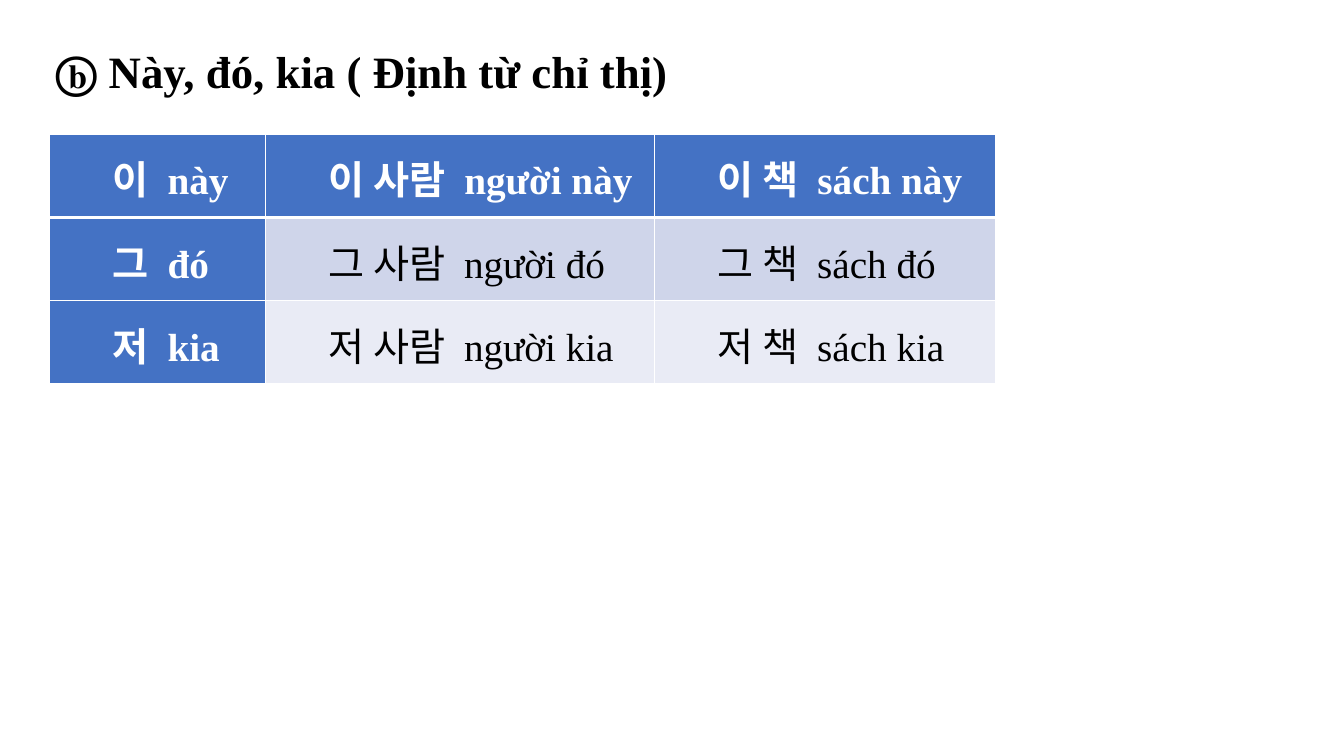
from dataclasses import dataclass

from lxml import etree
from pptx import Presentation
from pptx import util as u
from pptx.dml.color import RGBColor
from pptx.enum import text
from pptx.oxml import ns


@dataclass(frozen=True)
class Theme:
    """Colours, font and sizes of the slide."""
    font: str = "Times New Roman"
    black: str = "000000"
    white: str = "FFFFFF"
    header: str = "4472C4"
    bands: tuple = ("CFD5EA", "E9EBF5")
    title_size: int = 32
    cell_size: int = 28
    line_spacing: float = 1.07
    word_gap: int = 7


THEME = Theme()
TITLE = "ⓑ Này, đó, kia ( Định từ chỉ thị)"
DEMONSTRATIVES = [
    [("이", "này"), ("이 사람", "người này"), ("이 책", "sách này")],
    [("그", "đó"), ("그 사람", "người đó"), ("그 책", "sách đó")],
    [("저", "kia"), ("저 사람", "người kia"), ("저 책", "sách kia")],
]
COLUMN_WIDTHS = (2.14, 3.86, 3.38)


def apply(target, values):
    """Set each attribute named in values on the target."""
    for name, value in values.items():
        setattr(target, name, value)


def format_font(font, size, color, bold):
    """Give a font its face, size, weight and colour."""
    apply(font, {"name": THEME.font, "size": u.Pt(size), "bold": bold})
    font.color.rgb = RGBColor.from_string(color)


def indent(p, left, first):
    """Set the left margin and first-line indent of a paragraph in inches."""
    pPr = p._p.get_or_add_pPr()
    pPr.set("marL", str(u.Inches(left)))
    pPr.set("indent", str(u.Inches(first)))


def add_title(s, left, top, width, height):
    """Place the heading in the title placeholder."""
    sp = s.shapes.title
    apply(sp, {"left": u.Inches(left), "top": u.Inches(top),
               "width": u.Inches(width), "height": u.Inches(height)})
    tf = sp.text_frame
    tf.text = TITLE
    apply(tf, {"word_wrap": True, "vertical_anchor": text.MSO_ANCHOR.TOP,
               "auto_size": text.MSO_AUTO_SIZE.SHAPE_TO_FIT_TEXT})
    p = tf.paragraphs[0]
    indent(p, 0, 0.17)
    apply(p, {"alignment": text.PP_ALIGN.JUSTIFY, "space_before": u.Pt(0),
              "space_after": u.Pt(8), "line_spacing": THEME.line_spacing})
    format_font(p.runs[0].font, THEME.title_size, THEME.black, True)


def set_borders(cell, widths):
    """Draw white cell borders, with widths in points keyed by side."""
    tcPr = cell._tc.get_or_add_tcPr()
    for i, (side, width) in enumerate(widths.items()):
        ln = etree.Element(ns.qn(f"a:ln{side}"), w=str(u.Pt(width)))
        fill = etree.SubElement(ln, ns.qn("a:solidFill"))
        etree.SubElement(fill, ns.qn("a:srgbClr"), val=THEME.white)
        tcPr.insert(i, ln)


def fill_cell(cell, words, row, col):
    """Write a Korean and Vietnamese pair and style its cell."""
    heading = row == 0 or col == 0
    apply(cell, {"margin_left": u.Inches(0.07), "margin_right": u.Inches(0.07),
                 "margin_top": 0, "margin_bottom": 0,
                 "vertical_anchor": text.MSO_ANCHOR.MIDDLE})
    cell.fill.solid()
    cell.fill.fore_color.rgb = RGBColor.from_string(
        THEME.header if heading else THEME.bands[row - 1])
    set_borders(cell, {"L": 1, "R": 1, "T": 3 if row == 1 else 1,
                       "B": 3 if row == 0 else 1})
    p = cell.text_frame.paragraphs[0]
    indent(p, 0.56, 0)
    p.line_spacing = THEME.line_spacing
    korean, vietnamese = words
    for part in (korean, " ", vietnamese):
        r = p.add_run()
        r.text = part
        format_font(r.font, THEME.cell_size,
                    THEME.white if heading else THEME.black, heading)
        if part == " ":
            r._r.get_or_add_rPr().set("spc", str(THEME.word_gap * 100))


def add_demonstratives(s, left, top, width, height):
    """Place the table of demonstratives."""
    rows, cols = len(DEMONSTRATIVES), len(COLUMN_WIDTHS)
    table = s.shapes.add_table(rows, cols, u.Inches(left), u.Inches(top),
                               u.Inches(width), u.Inches(height)).table
    table.first_col = True
    for column, column_width in zip(table.columns, COLUMN_WIDTHS):
        column.width = u.Inches(column_width)
    for i, entries in enumerate(DEMONSTRATIVES):
        for j, words in enumerate(entries):
            fill_cell(table.cell(i, j), words, i, j)


def main():
    """Build and save the slide."""
    prs = Presentation()
    apply(prs, {"slide_width": u.Inches(13.33), "slide_height": u.Inches(7.5)})
    s = prs.slides.add_slide(prs.slide_layouts[5])
    add_title(s, 0.28, 0.35, 8.57, 0.63)
    add_demonstratives(s, 0.49, 1.33, sum(COLUMN_WIDTHS), 2.48)
    prs.save("out.pptx")


if __name__ == "__main__":
    main()
